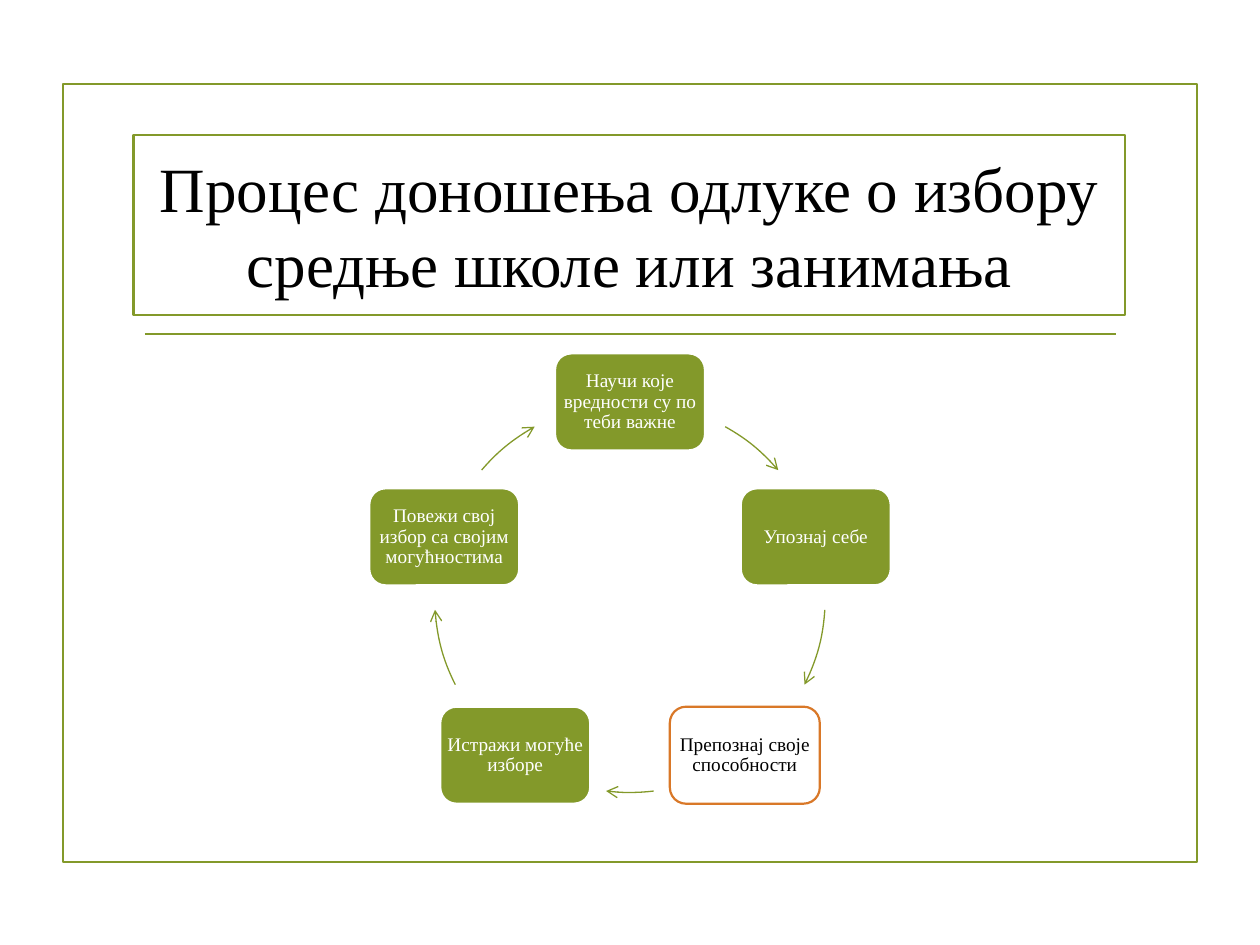
from dataclasses import dataclass
from math import cos, radians, sin

from lxml import etree
from pptx import Presentation
from pptx.dml.color import RGBColor
from pptx.enum import shapes, text
from pptx.oxml import ns
from pptx.util import Inches, Pt


@dataclass(frozen=True)
class Theme:
    font: str = "Times New Roman"
    green: str = "83992A"
    orange: str = "D97828"
    white: str = "FFFFFF"
    black: str = "000000"
    title: float = 36
    label: float = 11
    edge: float = 1.25
    thin: float = 0.75


THEME = Theme()
KIND = shapes.MSO_SHAPE
MID = (5, 4.74)
RADIUS = 1.55
NODE = (1.19, 0.77)
STEPS = (
    "Научи које вредности су по теби важне",
    "Упознај себе",
    "Препознај своје способности",
    "Истражи могуће изборе",
    "Повежи свој избор са својим могућностима",
)
FOCUS = 2
ARCS = ((29.2, 49.4), (93.7, 116.6), (173, 187), (243.4, 266.3), (310.6, 330.8))


def add_box(slide, kind, at, fill, line, width):
    box = slide.shapes.add_shape(kind, *map(Inches, at))
    box.shadow.inherit = False
    if fill:
        box.fill.solid()
        box.fill.fore_color.rgb = RGBColor.from_string(fill)
    else:
        box.fill.background()
    box.line.color.rgb = RGBColor.from_string(line)
    box.line.width = Pt(width)
    return box


def add_text(box, words, size, color, inset, gap=1.0):
    frame = box.text_frame
    frame.word_wrap = True
    frame.vertical_anchor = text.MSO_ANCHOR.MIDDLE
    frame.margin_left = frame.margin_right = Inches(inset)
    frame.margin_top = frame.margin_bottom = Inches(min(inset, 0.05))
    para = frame.paragraphs[0]
    para.alignment = text.PP_ALIGN.CENTER
    para.line_spacing = gap
    run = para.add_run()
    run.text = words
    run.font.name = THEME.font
    run.font.size = Pt(size)
    run.font.color.rgb = RGBColor.from_string(color)


def add_rule(slide, left, right, top):
    rule = slide.shapes.add_connector(
        shapes.MSO_CONNECTOR.STRAIGHT,
        Inches(left), Inches(top), Inches(right), Inches(top),
    )
    rule.line.color.rgb = RGBColor.from_string(THEME.green)
    rule.line.width = Pt(THEME.edge)
    etree.SubElement(rule._element.spPr, ns.qn("a:effectLst"))


def add_node(slide, index, words):
    angle = radians(index * 360 / len(STEPS))
    wide, high = NODE
    left = MID[0] + RADIUS * sin(angle) - wide / 2
    top = MID[1] - RADIUS * cos(angle) - high / 2
    fill, line, color = THEME.green, THEME.white, THEME.white
    if index == FOCUS:
        fill, line, color = THEME.white, THEME.orange, THEME.black
    at = (left, top, wide, high)
    box = add_box(slide, KIND.ROUNDED_RECTANGLE, at, fill, line, THEME.edge)
    add_text(box, words, THEME.label, color, 0.01, 0.9)


def add_arc(slide, start, end):
    at = (MID[0] - RADIUS, MID[1] - RADIUS, 2 * RADIUS, 2 * RADIUS)
    arc = add_box(slide, KIND.ARC, at, None, THEME.green, THEME.thin)
    for index, angle in enumerate((start, end)):
        arc.adjustments[index] = (angle - 90) % 360 * 0.6
    line = arc.line._get_or_add_ln()
    etree.SubElement(line, ns.qn("a:tailEnd"), type="arrow")


def main():
    deck = Presentation()
    deck.slide_width, deck.slide_height = Inches(10), Inches(7.5)
    slide = deck.slides.add_slide(deck.slide_layouts[6])
    add_box(slide, KIND.RECTANGLE, (0.5, 0.67, 9, 6.17), None, THEME.green, THEME.edge)
    add_rule(slide, 1.15, 8.86, 2.65)
    title = add_box(
        slide, KIND.RECTANGLE, (1.06, 1.07, 7.87, 1.43),
        THEME.white, THEME.green, THEME.edge,
    )
    add_text(
        title, "Процес доношења одлуке о избору средње школе или занимања",
        THEME.title, THEME.black, 0.1,
    )
    for index, (words, arc) in enumerate(zip(STEPS, ARCS)):
        add_node(slide, index, words)
        add_arc(slide, *arc)
    deck.save("out.pptx")


if __name__ == "__main__":
    main()
